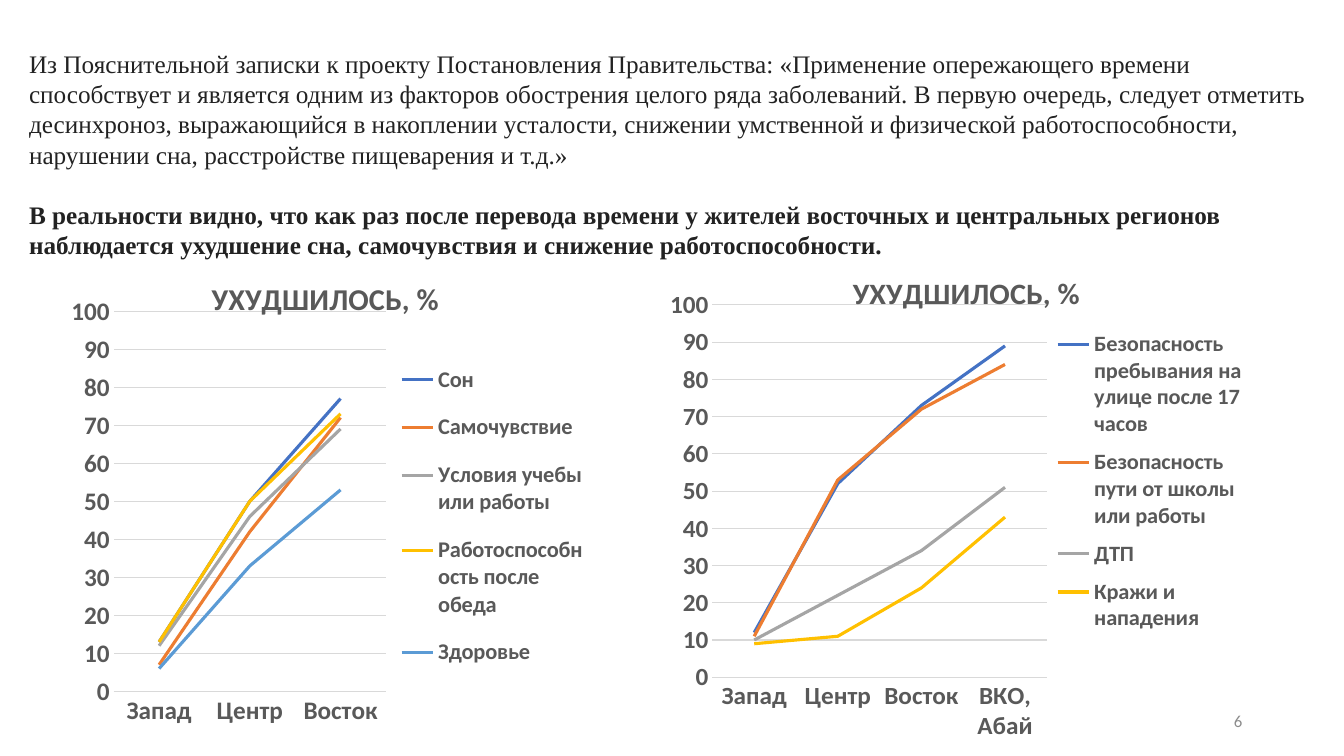
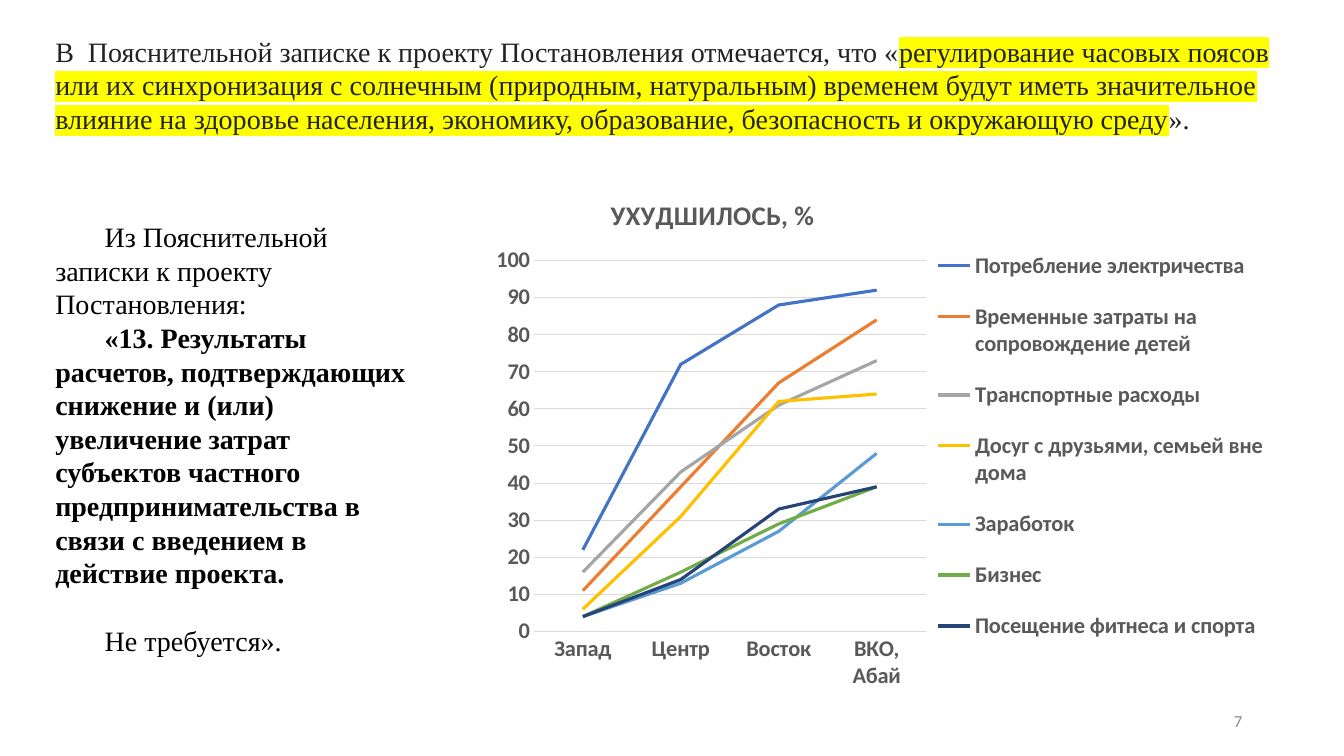
"""Build two slides on how life worsened after the clock change, by region."""
from lxml import etree
from pptx import Presentation
from pptx.chart.data import CategoryChartData
from pptx.dml.color import RGBColor
from pptx.enum.chart import XL_CHART_TYPE, XL_LEGEND_POSITION, XL_TICK_MARK
from pptx.enum.text import MSO_ANCHOR, PP_ALIGN
from pptx.oxml import parse_xml
from pptx.oxml.ns import nsdecls, qn
from pptx.util import Emu, Pt

LINE = XL_CHART_TYPE.LINE
LEGEND_RIGHT = XL_LEGEND_POSITION.RIGHT
NO_TICK = XL_TICK_MARK.NONE
MIDDLE = MSO_ANCHOR.MIDDLE
RIGHT = PP_ALIGN.RIGHT

PX = 9144
SANS, SERIF = "Calibri", "Times New Roman"
COLORS = {
    "ink": "222222",
    "black": "000000",
    "label": "595959",
    "grid": "D9D9D9",
    "number": "8C8C8C",
    "marker": "FFFF00",
}
SERIES_COLORS = ["4472C4", "ED7D31", "A5A5A5", "FFC000", "5B9BD5", "70AD47", "264478"]
REGIONS = ["Запад", "Центр", "Восток", "ВКО, Абай"]
CHART_TITLE = "УХУДШИЛОСЬ, %"

WELLBEING = {
    "Сон": (13, 50, 77),
    "Самочувствие": (7, 42, 72),
    "Условия учебы или работы": (12, 46, 69),
    "Работоспособность после обеда": (13, 50, 73),
    "Здоровье": (6, 33, 53),
}
SAFETY = {
    "Безопасность пребывания на улице после 17 часов": (12, 52, 73, 89),
    "Безопасность пути от школы или работы": (11, 53, 72, 84),
    "ДТП": (10, 22, 34, 51),
    "Кражи и нападения": (9, 11, 24, 43),
}
SPENDING = {
    "Потребление электричества": (22, 72, 88, 92),
    "Временные затраты на сопровождение детей": (11, 39, 67, 84),
    "Транспортные расходы": (16, 43, 61, 73),
    "Досуг с друзьями, семьей вне дома": (6, 31, 62, 64),
    "Заработок": (4, 13, 27, 48),
    "Бизнес": (4, 16, 29, 39),
    "Посещение фитнеса и спорта": (4, 14, 33, 39),
}


def px(*lengths):
    """Turn pixel lengths into EMU."""
    return [Emu(length * PX) for length in lengths]


def rgb(name):
    """Return a named colour."""
    return RGBColor.from_string(COLORS[name])


def style(font, name, size, color, bold=False):
    """Set the four font properties used on these slides."""
    font.name, font.size, font.bold = name, Pt(size), bold
    font.color.rgb = rgb(color)


def add_box(page, place):
    """Add an empty wrapping text box and return its frame."""
    frame = page.shapes.add_textbox(*px(*place)).text_frame
    frame.word_wrap = True
    return frame


def add_text(page, place, size, color, paragraphs, indent=0):
    """Add serif paragraphs given as (spans, bold, blank lines before)."""
    frame = add_box(page, place)
    for index, (spans, bold, gap) in enumerate(paragraphs):
        para = frame.add_paragraph() if index else frame.paragraphs[0]
        style(para.font, SERIF, size, color, bold)
        para.space_before = Pt(gap * size * 1.2)
        if indent:
            para._p.get_or_add_pPr().set("indent", str(indent * PX))
        for text, marked in spans:
            span = para.add_run()
            span.text = text
            if marked:
                highlight(span)


def highlight(span):
    """Mark a run with the highlighter colour."""
    mark = etree.SubElement(span._r.get_or_add_rPr(), qn("a:highlight"))
    etree.SubElement(mark, qn("a:srgbClr")).set("val", COLORS["marker"])


def add_slide_number(page, number):
    """Add the slide number field at the bottom right."""
    frame = add_box(page, (942, 695, 300, 40))
    frame.vertical_anchor = MIDDLE
    para = frame.paragraphs[0]
    para.alignment = RIGHT
    style(para.font, SANS, 12, "number")
    para._p.append(parse_xml(
        f'<a:fld {nsdecls("a")} id="{{B6F15528-21DE-4FAA-801E-634DDDAF4B2B}}" '
        f'type="slidenum"><a:rPr lang="ru-RU"/><a:t>{number}</a:t></a:fld>'))


def set_layout(element, before, fractions, inner=False):
    """Place a chart element by fractions of the chart: x, y and maybe w, h."""
    for old in element.findall(qn("c:layout")):
        element.remove(old)
    layout = etree.Element(qn("c:layout"))
    manual = etree.SubElement(layout, qn("c:manualLayout"))
    settings = [("layoutTarget", "inner")] if inner else []
    settings += [("xMode", "edge"), ("yMode", "edge")]
    settings += zip("xywh", fractions)
    for tag, value in settings:
        etree.SubElement(manual, qn(f"c:{tag}")).set("val", str(value))
    if before is None:
        element.insert(0, layout)
    else:
        element.find(qn(before)).addnext(layout)


def style_axes(chart, size):
    """Give both axes the label font and light grey lines."""
    for axis in (chart.category_axis, chart.value_axis):
        style(axis.tick_labels.font, SANS, size, "label", True)
        axis.major_tick_mark = NO_TICK
    values = chart.value_axis
    values.minimum_scale, values.maximum_scale, values.major_unit = 0, 100, 10
    values.tick_labels.number_format = "0"
    values.tick_labels.number_format_is_linked = False
    values.format.line.fill.background()
    for line in (chart.category_axis.format.line, values.major_gridlines.format.line):
        line.color.rgb, line.width = rgb("grid"), Pt(0.75)


def add_line_chart(page, place, data, size, title_at, plot_at, legend_at):
    """Add a titled line chart with one line per data row."""
    chart_data = CategoryChartData(number_format="0")
    chart_data.categories = REGIONS[:len(next(iter(data.values())))]
    for name, values in data.items():
        chart_data.add_series(name, values)
    chart = page.shapes.add_chart(LINE, *px(*place), chart_data).chart
    style(chart.font, SANS, size, "black", True)
    style_axes(chart, size)
    chart.plots[0].vary_by_categories = False
    for series, color in zip(chart.plots[0].series, SERIES_COLORS):
        series.smooth = False
        series.format.line.color.rgb = RGBColor.from_string(color)
        series.format.line.width = Pt(2.25)

    title = chart.chart_title
    title.text_frame.text = CHART_TITLE
    style(title.text_frame.paragraphs[0].font, SANS, size * 1.2, "label", True)
    chart.has_legend = True
    legend = chart.legend
    legend.position, legend.include_in_layout = LEGEND_RIGHT, False
    style(legend.font, SANS, 16, "label", True)

    set_layout(title._element, "c:tx", title_at)
    set_layout(legend._element, "c:legendPos", legend_at)
    set_layout(chart._chartSpace.chart.plotArea, None, plot_at, inner=True)


def build_health(page):
    """Fill the slide on wellbeing and safety."""
    add_line_chart(page, (48, 245, 540, 490), WELLBEING, 18, (0.29, 0.05),
                   (0.12, 0.13, 0.5, 0.77), (0.64, 0.2, 0.35, 0.69))
    add_line_chart(page, (660, 245, 582, 490), SAFETY, 18, (0.31, 0.04),
                   (0.08, 0.12, 0.57, 0.77), (0.66, 0.15, 0.33, 0.67))
    add_text(page, (19, 43, 1296, 222), 18, "ink", [
        ([("Из Пояснительной записки к проекту Постановления Правительства: "
           "«Применение опережающего времени способствует и является одним из "
           "факторов обострения целого ряда заболеваний. В первую очередь, следует "
           "отметить десинхроноз, выражающийся в накоплении усталости, снижении "
           "умственной и физической работоспособности, нарушении сна, расстройстве "
           "пищеварения и т.д.»", False)], False, 0),
        ([("В реальности видно, что как раз после перевода времени у жителей "
           "восточных и центральных регионов наблюдается ухудшение сна, "
           "самочувствия и снижение работоспособности.", False)], True, 1),
    ])


def build_costs(page):
    """Fill the slide on costs and spending."""
    add_line_chart(page, (474, 169, 793, 526), SPENDING, 16, (0.16, 0.04),
                   (0.07, 0.17, 0.49, 0.7), (0.58, 0.11, 0.41, 0.82))
    add_text(page, (45, 29, 1236, 111), 20, "ink", [
        ([("В  Пояснительной записке к проекту Постановления отмечается, что «", False),
          ("регулирование часовых поясов или их синхронизация с солнечным "
           "(природным, натуральным) временем будут иметь значительное влияние на "
           "здоровье населения, экономику, образование, безопасность и окружающую "
           "среду", True),
          ("».", False)], False, 0),
    ])
    add_text(page, (45, 213, 374, 448), 20, "black", [
        ([("Из Пояснительной записки к проекту Постановления:", False)], False, 0),
        ([("«13. Результаты расчетов, подтверждающих снижение и (или) увеличение "
           "затрат субъектов частного предпринимательства в связи с введением в "
           "действие проекта.", False)], True, 0),
        ([("Не требуется».", False)], False, 1),
    ], indent=49)


def main():
    """Build the deck and save it."""
    deck = Presentation()
    deck.slide_width, deck.slide_height = px(1333, 750)
    deck.element.set("firstSlideNum", "6")
    for number, build in enumerate((build_health, build_costs), start=6):
        page = deck.slides.add_slide(deck.slide_layouts[6])
        add_slide_number(page, number)
        build(page)
    deck.save("out.pptx")


if __name__ == "__main__":
    main()
